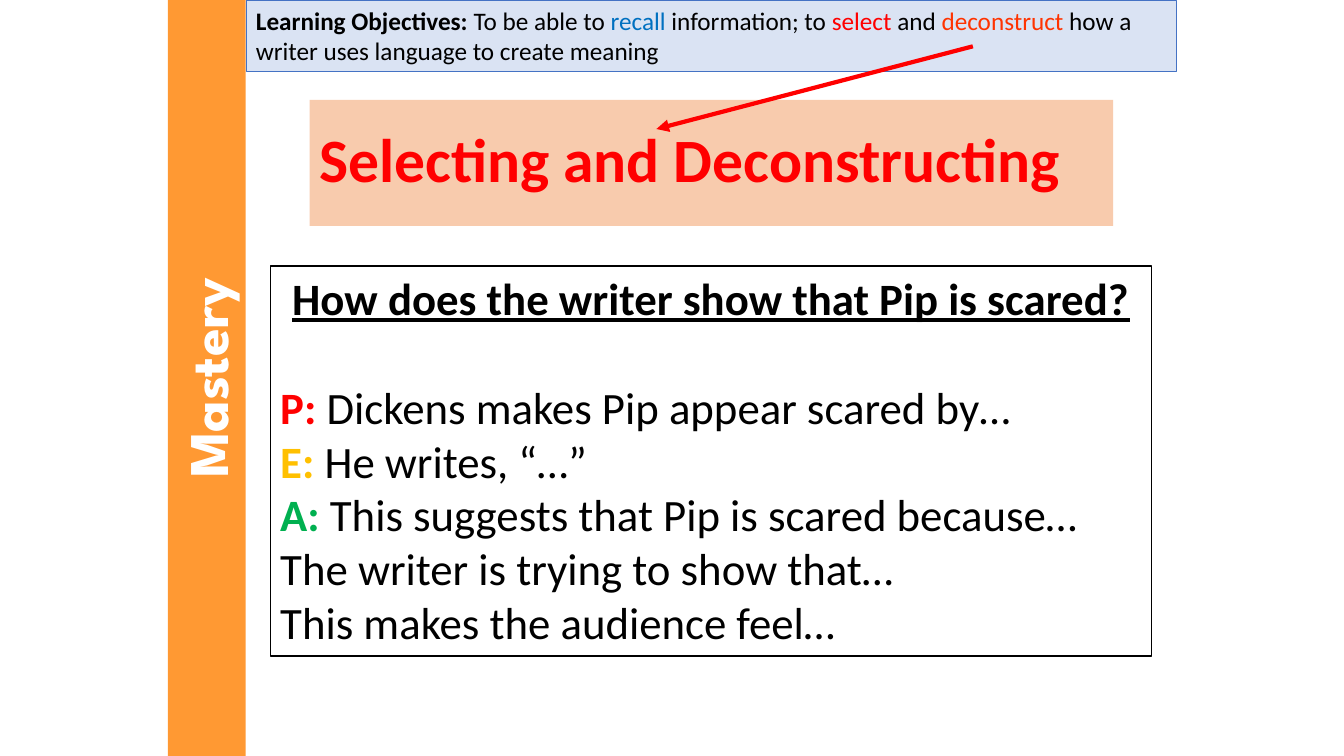
from dataclasses import dataclass
from pptx import Presentation
from pptx.dml.color import RGBColor as Rgb
from pptx.enum.shapes import MSO_CONNECTOR as Link, MSO_SHAPE as Form
from pptx.enum.text import MSO_ANCHOR as Anchor, MSO_AUTO_SIZE as Fit, PP_ALIGN as Align
from pptx.oxml.ns import qn
from pptx.util import Inches, Pt
from lxml.etree import SubElement


@dataclass(frozen=True)
class Theme:
    font: str = "Calibri"
    side: str = "League Spartan"
    black: str = "000000"
    white: str = "FFFFFF"
    red: str = "FF0000"
    gold: str = "FFC000"
    green: str = "00B050"
    blue: str = "0070C0"
    flame: str = "FF3300"
    peach: str = "F8CBAD"
    pale: str = "DAE3F3"
    edge: str = "4472C4"
    amber: str = "FF9933"
    title: int = 44
    label: int = 40
    body: int = 32
    goal: int = 18


T = Theme()

# Content: each line is a list of (text, colour, style), b = bold, u = underlined
TITLE = [[("Selecting and Deconstructing", T.red, "b")]]
TASK = [
    [("How does the writer show that Pip is scared?", T.black, "bu")],
    [("P: ", T.red, "b"), ("Dickens makes Pip appear scared by…", T.black, "")],
    [("E: ", T.gold, "b"), ("He writes, “…”", T.black, "")],
    [("A: ", T.green, "b"), ("This suggests that Pip is scared because…", T.black, "")],
    [("The writer is trying to show that…", T.black, "")],
    [("This makes the audience feel…", T.black, "")],
]
GOALS = [[
    ("Learning Objectives: ", T.black, "b"),
    ("To be able to ", T.black, ""),
    ("recall ", T.blue, ""),
    ("information; to ", T.black, ""),
    ("select ", T.red, ""),
    ("and ", T.black, ""),
    ("deconstruct ", T.flame, ""),
    ("how a writer uses language to create meaning", T.black, ""),
]]
LABEL = [[("Mastery", T.white, "b")]]

# Places, in percent of the slide's width and height
TITLE_AT = (23.03, 13.2, 59.79, 16.67)
TASK_AT = (20.11, 35.2, 65.57, 51.6)
GOALS_AT = (18.3, 0, 69.24, 9.47)
BAR_AT = (12.49, 0, 5.78, 100)
ARROW = (72.39, 6.13, 48.84, 17.07)

deck = Presentation()
deck.slide_width, deck.slide_height = Inches(13.33), Inches(7.5)
slide = deck.slides.add_slide(deck.slide_layouts[6])


def scale(spot):
    """Turn percentages into slide lengths."""
    sides = (deck.slide_width, deck.slide_height) * 2
    return [round(part * side / 100) for part, side in zip(spot, sides)]


def write(frame, lines, size, font):
    for i, line in enumerate(lines):
        para = frame.paragraphs[0] if i == 0 else frame.add_paragraph()
        para.alignment = Align.LEFT
        for text, color, style in line:
            run = para.add_run()
            run.text = text
            run.font.name, run.font.size = font, Pt(size)
            run.font.bold, run.font.underline = "b" in style, "u" in style
            run.font.color.rgb = Rgb.from_string(color)


def panel(box, fill, lines, size, font=T.font, edge=None, width=1):
    shape = slide.shapes.add_shape(Form.RECTANGLE, *box)
    shape.shadow.inherit = False
    shape.fill.solid()
    shape.fill.fore_color.rgb = Rgb.from_string(fill)
    if edge:
        shape.line.color.rgb = Rgb.from_string(edge)
        shape.line.width = Pt(width)
    else:
        shape.line.fill.background()
    frame = shape.text_frame
    frame.word_wrap = True
    frame.auto_size = Fit.SHAPE_TO_FIT_TEXT
    frame.vertical_anchor = Anchor.TOP
    write(frame, lines, size, font)
    return shape


# Title band
title = panel(scale(TITLE_AT), T.peach, TITLE, T.title).text_frame
title.auto_size = Fit.NONE
title.vertical_anchor = Anchor.MIDDLE
title.paragraphs[0].line_spacing = 0.9

# Question and sentence starters, one line's gap below the question
task = panel(scale(TASK_AT), T.white, TASK, T.body, edge=T.black)
head = task.text_frame.paragraphs[0]
head.alignment = Align.CENTER
head.space_after = Pt(T.body * 1.22)

# Learning objectives
panel(scale(GOALS_AT), T.pale, GOALS, T.goal, edge=T.edge, width=0.5)

# Arrow from objective to title
arrow = slide.shapes.add_connector(Link.STRAIGHT, *scale(ARROW))
arrow.line.color.rgb = Rgb.from_string(T.red)
arrow.line.width = Pt(3)
SubElement(arrow.line._get_or_add_ln(), qn("a:tailEnd"), type="triangle")
SubElement(arrow._element.spPr, qn("a:effectLst"))

# Side bar, laid flat about its own centre and then turned upright
x, y, w, h = scale(BAR_AT)
flat = (x + (w - h) // 2, y + (h - w) // 2, h, w)
bar = panel(flat, T.amber, LABEL, T.label, T.side)
bar.rotation = 270
bar.text_frame.paragraphs[0].alignment = Align.CENTER

deck.save("out.pptx")
